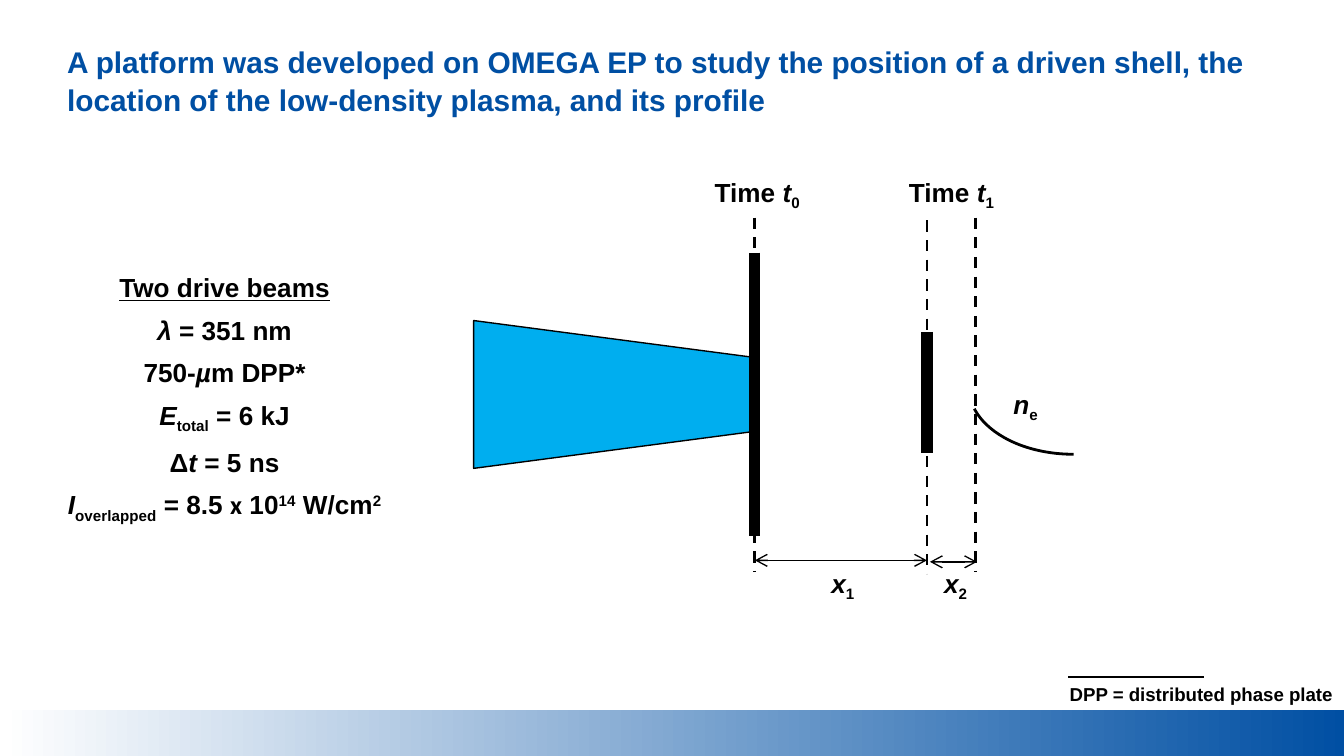
from pptx import Presentation
from pptx.dml.color import RGBColor
from pptx.enum import dml, shapes, text
from pptx.oxml import parse_xml
from pptx.oxml.ns import nsdecls, qn
from pptx.util import Pt

BLACK = RGBColor(0, 0, 0)
WHITE = RGBColor(255, 255, 255)
NAVY = RGBColor(0x00, 0x4F, 0xA3)
CYAN = RGBColor(0x00, 0xAE, 0xEF)

BASE = dict(size=Pt(14), name="Arial", bold=True)
SHIFT = {"sub": "-25000", "sup": "30000"}
SHELL, LATE, EDGE = 404.4, 496.6, 522.7  # x of the three time lines


def style(item, values):
    for key, value in values.items():
        setattr(item, key, value)


def add_run(para, words, look="", color=BLACK, **extra):
    """look is one of: "", i (italic), u (underline), sub, sup."""
    run = para.add_run()
    run.text = words
    marks = {"i": {"italic": True}, "u": {"underline": True}}
    style(run.font, {**BASE, **marks.get(look, {}), **extra})
    run.font.color.rgb = color
    if look in SHIFT:
        run._r.get_or_add_rPr().set("baseline", SHIFT[look])


def add_text(slide, box, paras, align=text.PP_ALIGN.CENTER, lead=None,
             anchor=text.MSO_ANCHOR.TOP, **extra):
    frame = slide.shapes.add_textbox(*map(Pt, box)).text_frame
    style(frame, dict(word_wrap=True, vertical_anchor=anchor,
                      margin_left=0, margin_right=0,
                      margin_top=Pt(3.6), margin_bottom=Pt(3.6)))
    for num, runs in enumerate(paras):
        para = frame.add_paragraph() if num else frame.paragraphs[0]
        style(para, dict(alignment=align, line_spacing=lead))
        if num:
            para.space_before = Pt(6)
        for words, *more in runs:
            look = more[0] if more else ""
            font = {"name": more[1]} if len(more) > 1 else {}
            add_run(para, words, look, **{**extra, **font})


def add_line(slide, start, end, width, dash=None, arrows=False):
    line = slide.shapes.add_connector(
        shapes.MSO_CONNECTOR.STRAIGHT, *map(Pt, start + end))
    line.line.color.rgb = BLACK
    style(line.line, dict(width=Pt(width), dash_style=dash))
    if arrows:
        ln = line._element.spPr.find(qn("a:ln"))
        for tag in ("headEnd", "tailEnd"):
            ln.append(parse_xml(f'<a:{tag} {nsdecls("a")} type="arrow"/>'))
    line._element.spPr.append(parse_xml(f'<a:effectLst {nsdecls("a")}/>'))


def add_form(slide, kind, box, fill=None, width=None, adjust=(), turn=0):
    form = slide.shapes.add_shape(kind, *map(Pt, box))
    form.shadow.inherit = False
    form.rotation = turn
    for num, value in enumerate(adjust):
        form.adjustments[num] = value
    if fill is None:
        form.fill.background()
    else:
        form.fill.solid()
        form.fill.fore_color.rgb = fill
    if width:
        form.line.color.rgb = BLACK
        form.line.width = Pt(width)
    else:
        form.line.fill.background()
    return form


def add_band(slide):
    band = add_form(slide, shapes.MSO_SHAPE.RECTANGLE, (0.7, 380.2, 720, 25.9))
    band.fill.gradient()
    band.fill.gradient_angle = 0
    for stop, color, place in zip(band.fill.gradient_stops,
                                  (WHITE, NAVY), (0, 1)):
        stop.color.rgb = color
        stop.position = place


def add_scheme(slide):
    # Beam cone, shell at both times, density profile
    add_form(slide, shapes.MSO_SHAPE.TRAPEZOID, (289.4, 136.1, 79.2, 150.5),
             CYAN, 0.75, (0.25,), 90)
    add_line(slide, (SHELL, 135.4), (SHELL, 287.3), 6)
    add_line(slide, (LATE, 177.8), (LATE, 242.6), 6)
    add_form(slide, shapes.MSO_SHAPE.ARC, (519.1, 172.1, 111.6, 71.3),
             width=1.5, adjust=(53.75, 100.8))

    # Time lines and distances
    for x, top, foot in ((LATE, 118.1, 307.4), (SHELL, 116.6, 306.7),
                         (EDGE, 116.6, 306)):
        add_line(slide, (x, top), (x, foot), 1.5, dml.MSO_LINE.DASH)
    for left, right, y in ((SHELL, LATE, 300.2), (498.2, 523.4, 301)):
        add_line(slide, (left, y), (right, y), 0.75, arrows=True)

    # Labels
    for x, y, name, index in ((532.1, 204.5, "n", "e"),
                              (434.2, 300.2, "x", "1"),
                              (494.6, 300.2, "x", "2")):
        add_text(slide, (x, y, 34.6, 36), [[(name, "i"), (index, "sub")]])
    for x, width, index in ((374.4, 62.6, "0"), (480.2, 59, "1")):
        add_text(slide, (x, 90.7, width, 24.5),
                 [[("Time ",), ("t", "i"), (index, "sub")]])


def main():
    deck = Presentation()
    style(deck, dict(slide_width=Pt(720), slide_height=Pt(405)))
    slide = deck.slides.add_slide(deck.slide_layouts[6])
    add_band(slide)

    # Title
    add_text(slide, (36, 33.1, 641.5, 19.4),
             [[("A platform was developed on OMEGA EP to study the position "
                "of a driven shell, the location of the low-density plasma, "
                "and its profile",)]],
             text.PP_ALIGN.LEFT, 1.05, text.MSO_ANCHOR.MIDDLE,
             size=Pt(16), color=NAVY)

    add_scheme(slide)

    # Beam parameters
    add_text(slide, (27.4, 141.8, 185.8, 157.7), [
        [("Two drive beams", "u")],
        [("λ", "i"), (" = 351 nm",)],
        [("750-",), ("µ", "i"), ("m DPP*",)],
        [("E", "i"), ("total", "sub"), (" = 6 kJ",)],
        [("Δ",), ("t", "i"), (" = 5 ns",)],
        [("I", "i"), ("overlapped", "sub"), (" = 8.5 ",),
         ("x", "", "Calibri"), (" 10",), ("14", "sup"), (" W/cm",),
         ("2", "sup")],
    ])

    # Footnote
    add_text(slide, (573.1, 362.2, 204.5, 23.8),
             [[("DPP = distributed phase plate",)]],
             text.PP_ALIGN.LEFT, size=Pt(10))
    add_line(slide, (572.4, 362.9), (645.1, 362.9), 1)

    deck.save("out.pptx")


if __name__ == "__main__":
    main()
